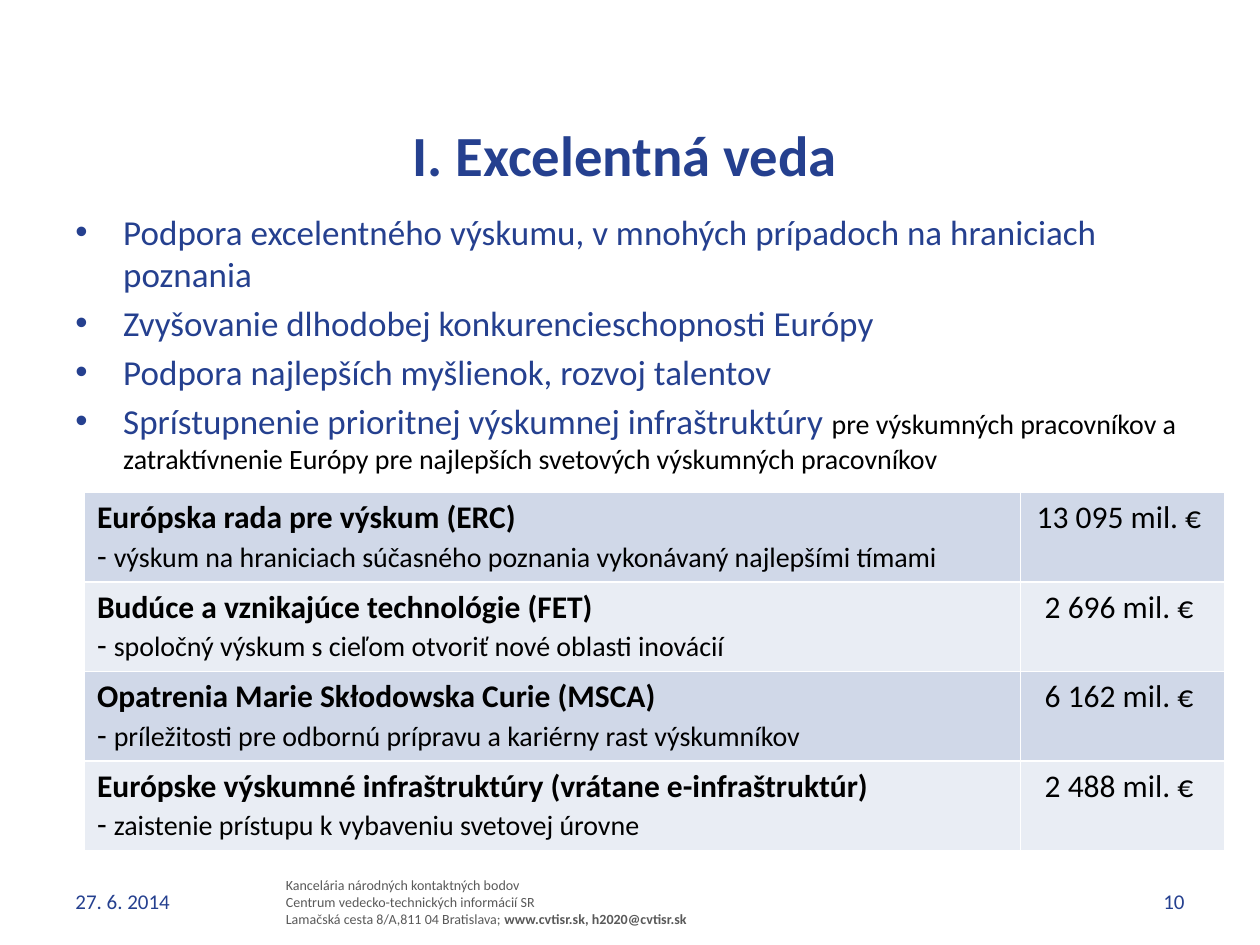
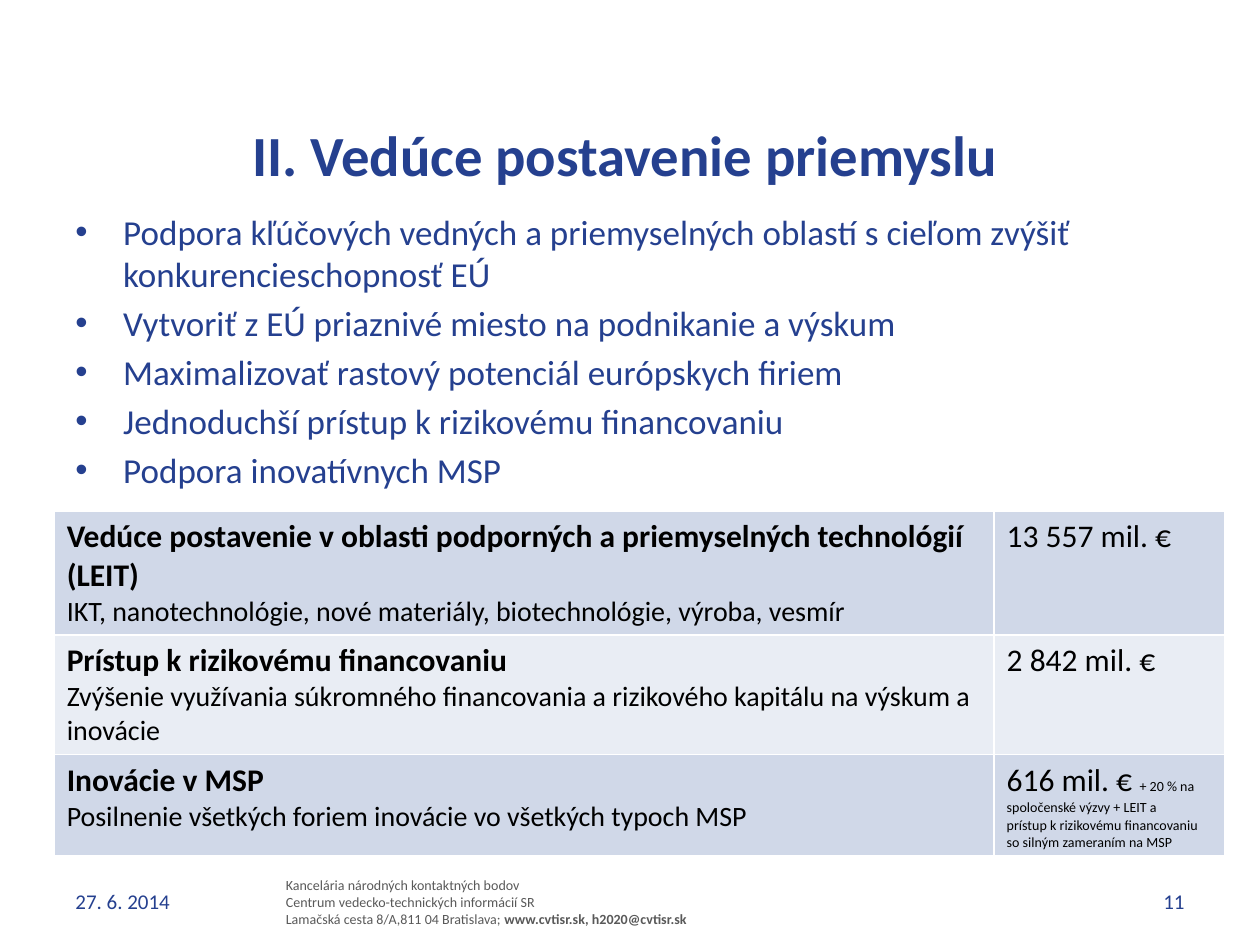
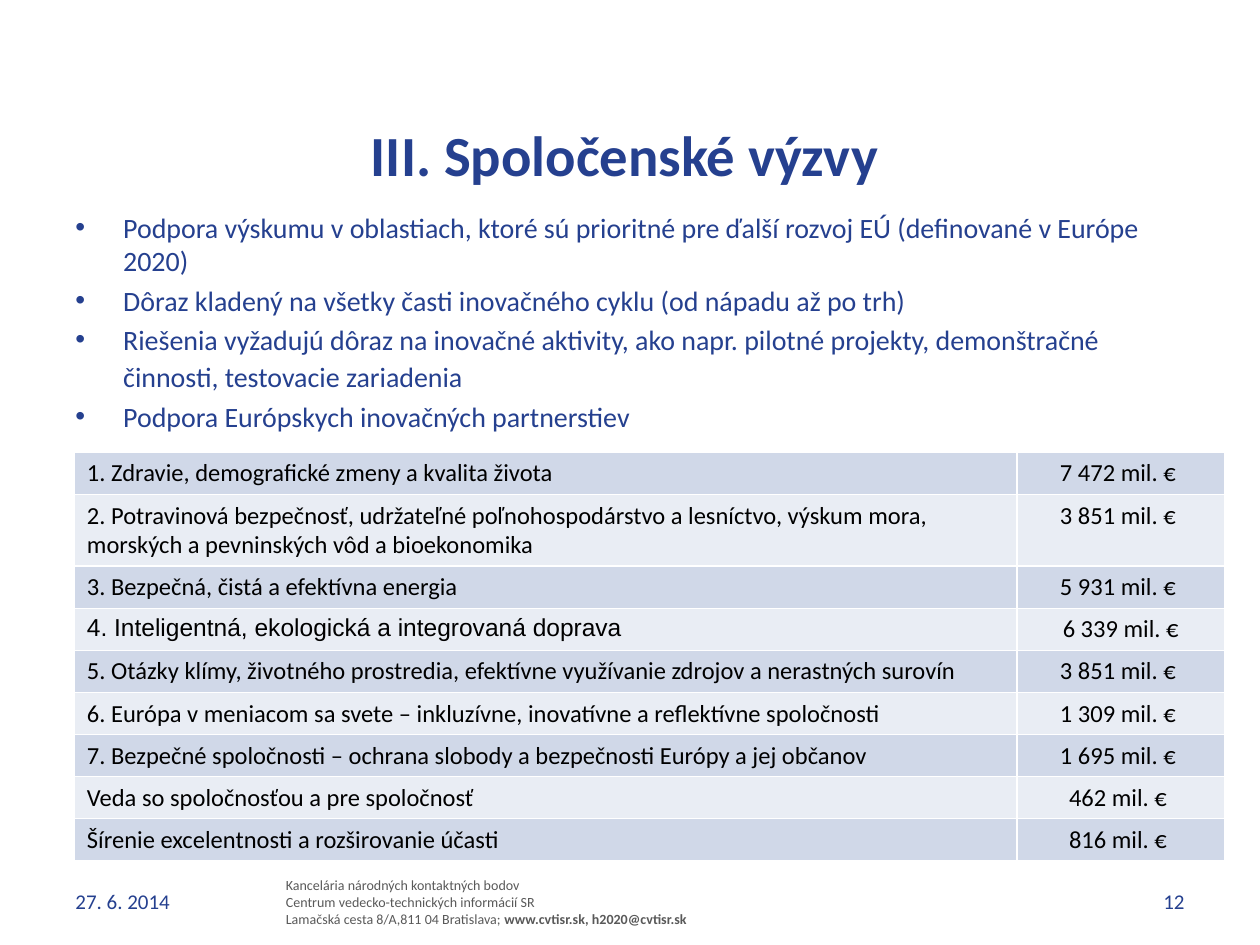
from lxml.etree import SubElement
from pptx import Presentation
from pptx.dml.color import RGBColor
from pptx.enum.text import MSO_ANCHOR, PP_ALIGN
from pptx.oxml.ns import qn
from pptx.util import Inches, Pt

COLORS = {
    "blue": "25408F", "grey": "595959", "black": "000000", "white": "FFFFFF",
    "band_dark": "D0D8E8", "band_light": "E9EDF4",
}

# Text styles
TITLE = {"name": "Calibri", "size": 32.4, "bold": True, "color": "blue"}
BULLET = {"name": "Calibri", "size": 20, "bold": False, "color": "blue"}
FOOTER = {"name": "Calibri", "size": 8, "bold": False, "color": "grey"}
DATE = {**BULLET, "size": 12}
CELL = {**BULLET, "size": 18, "color": "black"}
BOLD, SMALL, TINY = {"bold": True}, {"size": 16}, {"size": 8}

# Shared footer: one list of (text, changes) runs per line
ADDRESS = [
    [("Kancelária národných kontaktných bodov", {})],
    [("Centrum vedecko-technických informácií SR", {})],
    [("Lamačská cesta 8/A,811 04 Bratislava; ", {}),
     ("www.cvtisr.sk, h2020@cvtisr.sk", BOLD)],
]

# Slide content: a plain string is a line in the base style
SLIDES = [
    {
        "title": "I. Excelentná veda ",
        "bullet_size": 20,
        "bullets": [
            "Podpora excelentného výskumu, v mnohých prípadoch na hraniciach poznania",
            "Zvyšovanie dlhodobej konkurencieschopnosti Európy",
            "Podpora najlepších myšlienok, rozvoj talentov",
            [("Sprístupnenie prioritnej výskumnej infraštruktúry ", {}),
             ("pre výskumných pracovníkov a zatraktívnenie Európy pre najlepších "
              "svetových výskumných pracovníkov", {"size": 16, "color": "black"})],
        ],
        "at": (0.67, 3.91), "columns": (7.43, 1.62), "heights": [0.71] * 4,
        "cell_size": 18, "amount_align": PP_ALIGN.CENTER,
        "rows": [
            ([[(name, BOLD)], [("- ", {}), (aim, SMALL)]], [amount])
            for name, aim, amount in [
                ("Európska rada pre výskum (ERC)",
                 "výskum na hraniciach súčasného poznania vykonávaný najlepšími tímami",
                 "13 095 mil. € "),
                ("Budúce a vznikajúce technológie (FET)",
                 "spoločný výskum s cieľom otvoriť nové oblasti inovácií",
                 "2 696 mil. € "),
                ("Opatrenia Marie Skłodowska Curie (MSCA)",
                 "príležitosti pre odbornú prípravu a kariérny rast výskumníkov",
                 "6 162 mil. € "),
                ("Európske výskumné infraštruktúry (vrátane e-infraštruktúr)",
                 "zaistenie prístupu k vybaveniu svetovej úrovne",
                 "2 488 mil. € "),
            ]
        ],
    },
    {
        "title": "II. Vedúce postavenie priemyslu ",
        "bullet_size": 20,
        "bullets": [
            "Podpora kľúčových vedných a priemyselných oblastí s cieľom zvýšiť "
            "konkurencieschopnosť EÚ",
            "Vytvoriť z EÚ priaznivé miesto na podnikanie a výskum",
            "Maximalizovať rastový potenciál európskych firiem",
            "Jednoduchší prístup k rizikovému financovaniu",
            "Podpora inovatívnych MSP",
        ],
        "at": (0.43, 4.06), "columns": (7.46, 1.83), "heights": [0.98, 0.95, 0.8],
        "cell_size": 18, "amount_align": PP_ALIGN.LEFT,
        "rows": [
            ([[(name, BOLD)], [(aim, SMALL)]], amount)
            for name, aim, amount in [
                ("Vedúce postavenie v oblasti podporných a priemyselných technológií (LEIT)",
                 "IKT, nanotechnológie, nové materiály, biotechnológie, výroba, vesmír",
                 ["13 557 mil. €"]),
                ("Prístup k rizikovému financovaniu",
                 "Zvýšenie využívania súkromného financovania a rizikového kapitálu "
                 "na výskum a inovácie",
                 ["2 842 mil. €"]),
                ("Inovácie v MSP",
                 "Posilnenie všetkých foriem inovácie vo všetkých typoch MSP",
                 [[("616 mil. € ", {}), ("+ 20 % na", TINY)],
                  [("spoločenské výzvy + LEIT a", TINY)],
                  [("prístup k rizikovému financovaniu so silným zameraním na MSP", TINY)]]),
            ]
        ],
    },
    {
        "title": "III. Spoločenské výzvy ",
        "bullet_size": 16,
        "bullets": [
            "Podpora výskumu v oblastiach, ktoré sú prioritné pre ďalší rozvoj EÚ "
            "(definované v Európe 2020)",
            "Dôraz kladený na všetky časti inovačného cyklu (od nápadu až po trh)",
            [("Riešenia vyžadujú dôraz na inovačné aktivity, ako napr. pilotné projekty, "
              "demonštračné činnosti, testovacie zariadenia", {}), (" ", {"size": 18})],
            "Podpora Európskych inovačných partnerstiev",
        ],
        "at": (0.59, 3.59), "columns": (7.48, 1.65),
        "heights": [0.33, 0.57] + [0.33] * 7,
        "cell_size": 14, "amount_align": PP_ALIGN.CENTER,
        "rows": [
            ([challenge], [amount])
            for challenge, amount in [
                ("1. Zdravie, demografické zmeny a kvalita života", "7 472 mil. € "),
                ("2. Potravinová bezpečnosť, udržateľné poľnohospodárstvo a lesníctvo, "
                 "výskum mora, morských a pevninských vôd a bioekonomika", "3 851 mil. € "),
                ("3. Bezpečná, čistá a efektívna energia", "5 931 mil. € "),
                ([("4. Inteligentná, ekologická a integrovaná doprava", {"name": "Arial"})],
                 "6 339 mil. €"),
                ("5. Otázky klímy, životného prostredia, efektívne využívanie zdrojov "
                 "a nerastných surovín", "3 851 mil. € "),
                ("6. Európa v meniacom sa svete – inkluzívne, inovatívne a reflektívne "
                 "spoločnosti", "1 309 mil. € "),
                ("7. Bezpečné spoločnosti – ochrana slobody a bezpečnosti Európy "
                 "a jej občanov", "1 695 mil. € "),
                ("Veda so spoločnosťou a pre spoločnosť", "462 mil. € "),
                ("Šírenie excelentnosti a rozširovanie účasti", "816 mil. € "),
            ]
        ],
    },
]


def write(frame, lines, style, align=PP_ALIGN.LEFT):
    """Fill a text frame with one paragraph per line."""
    for number, line in enumerate(lines):
        paragraph = frame.add_paragraph() if number else frame.paragraphs[0]
        paragraph.alignment = align
        for text, changes in [(line, {})] if isinstance(line, str) else line:
            run = paragraph.add_run()
            run.text = text
            for key, value in {**style, **changes}.items():
                if key == "color":
                    run.font.color.rgb = RGBColor.from_string(COLORS[value])
                else:
                    setattr(run.font, key, Pt(value) if key == "size" else value)


def add_text(slide, box, lines, style, align=PP_ALIGN.LEFT, anchor=MSO_ANCHOR.MIDDLE):
    frame = slide.shapes.add_textbox(*map(Inches, box)).text_frame
    frame.word_wrap = True
    frame.vertical_anchor = anchor
    write(frame, lines, style, align)
    return frame


prs = Presentation()
prs.slide_width, prs.slide_height = Inches(10), Inches(7.5)

for page, content in enumerate(SLIDES, start=10):
    slide = prs.slides.add_slide(prs.slide_layouts[6])

    # Title and footer
    add_text(slide, (2.17, 6.91, 4.02, 0.77), ADDRESS, FOOTER, anchor=MSO_ANCHOR.TOP)
    add_text(slide, (0.51, 0.99, 9, 0.47), [content["title"]], TITLE, PP_ALIGN.CENTER)
    add_text(slide, (0.5, 6.95, 1.19, 0.4), ["27. 6. 2014"], DATE)
    add_text(slide, (8.86, 6.95, 0.64, 0.4), [str(page)], DATE, PP_ALIGN.RIGHT)

    # Bulleted goals
    size = content["bullet_size"]
    goals = add_text(slide, (0.5, 1.62, 9, 5.08), content["bullets"],
                     {**BULLET, "size": size}, anchor=MSO_ANCHOR.TOP)
    for number, goal in enumerate(goals.paragraphs):
        properties = goal._p.get_or_add_pPr()
        properties.set("marL", str(Inches(0.38)))
        properties.set("indent", str(-Inches(0.38)))
        SubElement(properties, qn("a:buFont"), typeface="Arial")
        SubElement(properties, qn("a:buChar"), char="•")
        if number:
            goal.space_before = Pt(0.2 * size)

    # Budget table
    left, top = content["at"]
    columns, heights = content["columns"], content["heights"]
    budget = slide.shapes.add_table(
        len(heights), len(columns), Inches(left), Inches(top),
        Inches(sum(columns)), Inches(sum(heights))).table
    budget.first_row = budget.horz_banding = False
    for column, width in zip(budget.columns, columns):
        column.width = Inches(width)
    aligns = (PP_ALIGN.LEFT, content["amount_align"])
    for r, (height, row) in enumerate(zip(heights, content["rows"])):
        budget.rows[r].height = Inches(height)
        band = COLORS["band_light" if r % 2 else "band_dark"]
        for c, (lines, align) in enumerate(zip(row, aligns)):
            cell = budget.cell(r, c)
            write(cell.text_frame, lines, {**CELL, "size": content["cell_size"]}, align)
            for side in ("lnL", "lnR", "lnT", "lnB"):
                border = SubElement(cell._tc.get_or_add_tcPr(), qn(f"a:{side}"),
                                    w=str(Pt(1)))
                SubElement(SubElement(border, qn("a:solidFill")), qn("a:srgbClr"),
                           val=COLORS["white"])
            cell.fill.solid()
            cell.fill.fore_color.rgb = RGBColor.from_string(band)

prs.save("out.pptx")
